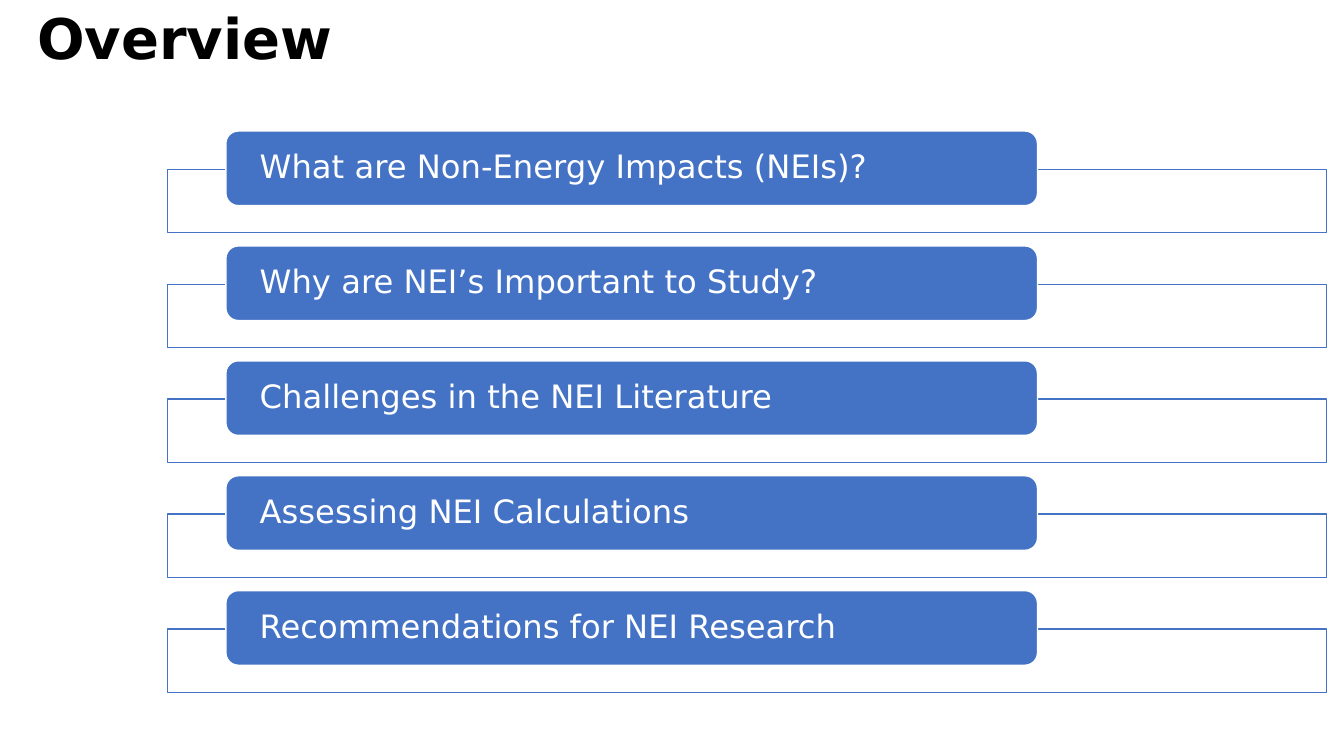
from dataclasses import dataclass

from lxml import etree
from pptx import Presentation
from pptx.dml.color import RGBColor
from pptx.enum.shapes import MSO_SHAPE
from pptx.enum.text import MSO_ANCHOR, MSO_AUTO_SIZE, PP_ALIGN
from pptx.oxml.ns import qn
from pptx.util import Inches, Pt

RECTANGLE = MSO_SHAPE.RECTANGLE
ROUNDED = MSO_SHAPE.ROUNDED_RECTANGLE
MIDDLE = MSO_ANCHOR.MIDDLE
NO_FIT = MSO_AUTO_SIZE.NONE
LEFT = PP_ALIGN.LEFT


@dataclass(frozen=True)
class Theme:
    font: str = "DejaVu Sans"
    black: RGBColor = RGBColor(0x00, 0x00, 0x00)
    white: RGBColor = RGBColor(0xFF, 0xFF, 0xFF)
    blue: RGBColor = RGBColor(0x44, 0x72, 0xC4)
    title_size: Pt = Pt(40)
    topic_size: Pt = Pt(23)


THEME = Theme()
TOPICS = [
    "What are Non-Energy Impacts (NEIs)?",
    "Why are NEI’s Important to Study?",
    "Challenges in the NEI Literature",
    "Assessing NEI Calculations",
    "Recommendations for NEI Research",
]
FIRST_TOP = 1.3
ROW_STEP = 1.14
FRAME_DROP = 0.38


def add_panel(page, kind, left, top, width, height, fill, line):
    panel = page.shapes.add_shape(
        kind, Inches(left), Inches(top), Inches(width), Inches(height))
    panel.shadow.inherit = False
    panel.fill.solid()
    panel.fill.fore_color.rgb = fill
    panel.line.color.rgb = line
    panel.line.width = Pt(1)
    return panel


def write_line(box, text, size, color, bold):
    frame = box.text_frame
    frame.word_wrap = True
    frame.auto_size = NO_FIT
    frame.vertical_anchor = MIDDLE
    frame.text = text
    paragraph = frame.paragraphs[0]
    paragraph.alignment = LEFT
    paragraph.line_spacing = 0.9
    paragraph.font.name = THEME.font
    paragraph.font.size = size
    paragraph.font.bold = bold
    paragraph.font.color.rgb = color


deck = Presentation()
deck.slide_width = Inches(13.33)
deck.slide_height = Inches(7.5)
page = deck.slides.add_slide(deck.slide_layouts.get_by_name("Title Only"))

title = page.shapes.title
title.left, title.top = Inches(0.27), Inches(-0.31)
title.width, title.height = Inches(11.5), Inches(1.45)
write_line(title, "Overview", THEME.title_size, THEME.black, True)

for row, topic in enumerate(TOPICS):
    top = FIRST_TOP + row * ROW_STEP
    frame = add_panel(page, RECTANGLE, 1.66, top + FRAME_DROP, 11.5, 0.63,
                      THEME.white, THEME.blue)
    fill_color = frame.fill._xPr.find(qn("a:solidFill"))[0]
    etree.SubElement(fill_color, qn("a:alpha"), val="90000")

    label = add_panel(page, ROUNDED, 2.24, top, 8.05, 0.74,
                      THEME.blue, THEME.white)
    label.text_frame.margin_left = label.text_frame.margin_right = Inches(0.3)
    label.text_frame.margin_top = label.text_frame.margin_bottom = 0
    write_line(label, topic, THEME.topic_size, THEME.white, False)

deck.save("out.pptx")
